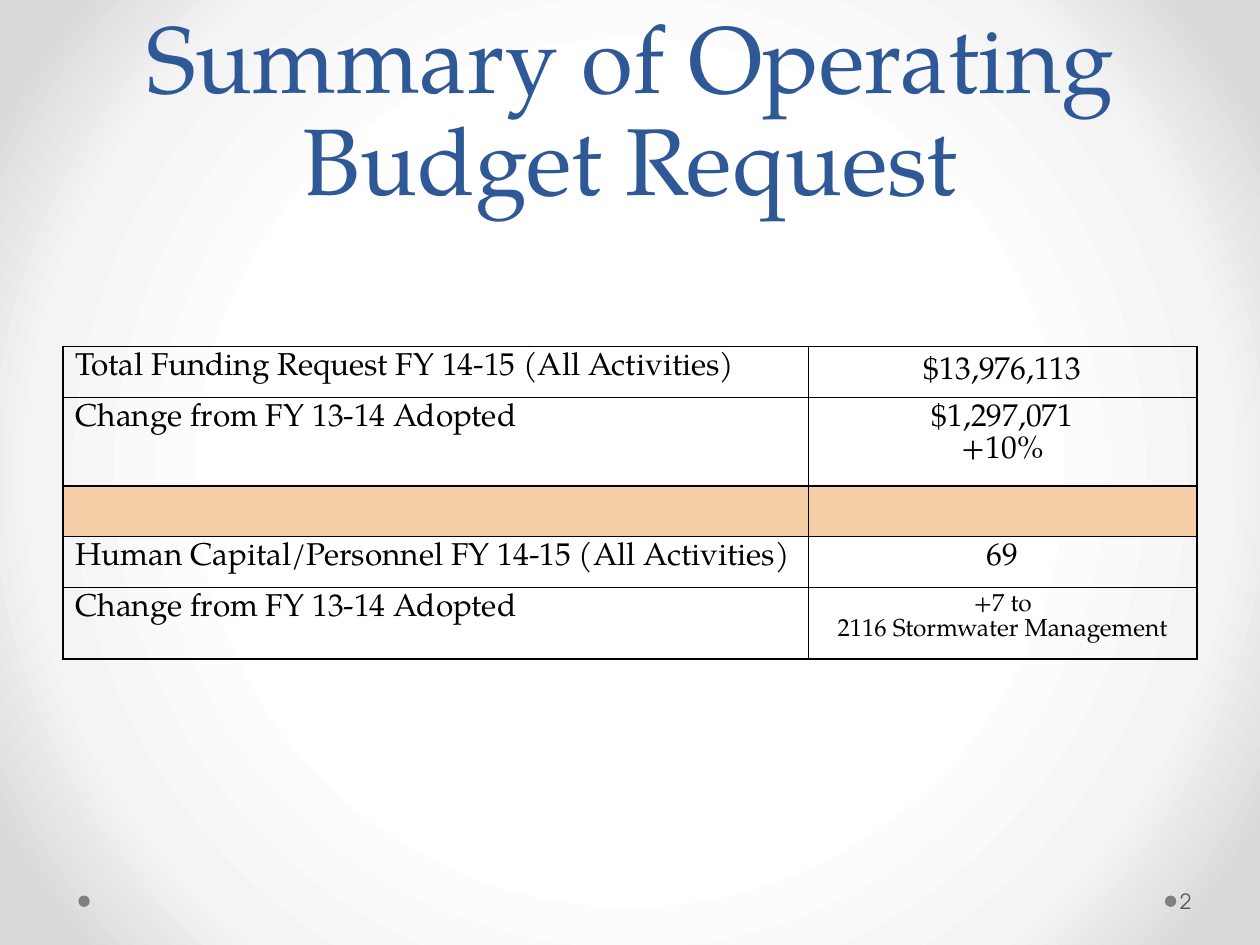
from dataclasses import dataclass

from lxml.etree import SubElement
from pptx import Presentation
from pptx.dml.color import RGBColor
from pptx.enum.shapes import MSO_SHAPE
from pptx.enum.text import MSO_ANCHOR, PP_ALIGN
from pptx.oxml import parse_xml
from pptx.oxml.ns import nsdecls, qn
from pptx.util import Pt


@dataclass(frozen=True)
class Theme:
    serif: str = "TeX Gyre Pagella"
    sans: str = "TeX Gyre Adventor"
    heading: str = "2F5897"
    ink: str = "000000"
    muted: str = "595959"
    dot: str = "808080"
    band: str = "F5CEA7"
    backdrop: tuple = ((50, "FFFFFF"), (76, "F4F4F4"), (92, "DADADA"))
    title_size: int = 54
    body_size: int = 18
    detail_size: int = 14
    number_size: int = 12


THEME = Theme()

# label, value lines, value size, value anchor, row height
BUDGET_ROWS = (
    ("Total Funding Request FY 14-15 (All Activities)", "$13,976,113",
     THEME.body_size, MSO_ANCHOR.MIDDLE, 29.3),
    ("Change from FY 13-14 Adopted", "$1,297,071\n+10%",
     THEME.body_size, MSO_ANCHOR.TOP, 43.4),
    ("", "", THEME.body_size, MSO_ANCHOR.TOP, 25.2),
    ("Human Capital/Personnel FY 14-15 (All Activities)", "69",
     THEME.body_size, MSO_ANCHOR.TOP, 29.3),
    ("Change from FY 13-14 Adopted", "+7 to\n2116 Stormwater Management",
     THEME.detail_size, MSO_ANCHOR.TOP, 35.6),
)


def write(frame, text, *, size=THEME.body_size, font=THEME.serif,
          color=THEME.ink, align=PP_ALIGN.LEFT, spacing=None):
    """Fill a text frame, one paragraph for each line of the text."""
    frame.word_wrap = True
    frame.text = text
    for paragraph in frame.paragraphs:
        paragraph.alignment = align
        if spacing:
            paragraph.line_spacing = Pt(spacing)
        for part in (paragraph, *paragraph.runs):
            part.font.size = Pt(size)
            part.font.name = font
            part.font.color.rgb = RGBColor.from_string(color)


def paint_backdrop(slide):
    fill = slide.background.fill
    fill.gradient()
    stops = "".join(
        f'<a:gs pos="{position * 1000}"><a:srgbClr val="{color}"/></a:gs>'
        for position, color in THEME.backdrop)
    radial = parse_xml(
        f'<a:gradFill {nsdecls("a")} rotWithShape="1"><a:gsLst>{stops}</a:gsLst>'
        '<a:path path="circle"><a:fillToRect l="50000" t="50000" r="50000" b="50000"/>'
        '</a:path></a:gradFill>')
    linear = slide.element.find(".//" + qn("a:gradFill"))
    linear.getparent().replace(linear, radial)


def add_title(slide, left, top, width, height):
    title = slide.shapes.add_textbox(Pt(left), Pt(top), Pt(width), Pt(height))
    title.text_frame.vertical_anchor = MSO_ANCHOR.BOTTOM
    write(title.text_frame, "Summary of Operating Budget Request",
          size=THEME.title_size, color=THEME.heading,
          align=PP_ALIGN.CENTER, spacing=58)


def outline_cell(cell):
    properties = cell._tc.get_or_add_tcPr()
    for index, side in enumerate(("lnL", "lnR", "lnT", "lnB")):
        border = parse_xml(
            f'<a:{side} {nsdecls("a")} w="{Pt(1)}"><a:solidFill/></a:{side}>')
        SubElement(border[0], qn("a:srgbClr"), val=THEME.ink)
        properties.insert(index, border)


def add_budget_table(slide, left, top, width, label_width):
    height = sum(row[-1] for row in BUDGET_ROWS)
    table = slide.shapes.add_table(
        len(BUDGET_ROWS), 2, Pt(left), Pt(top), Pt(width), Pt(height)).table
    table.first_row = table.horz_banding = False
    table.columns[0].width = Pt(label_width)
    table.columns[1].width = Pt(width - label_width)
    for row, (label, value, size, anchor, row_height) in enumerate(BUDGET_ROWS):
        table.rows[row].height = Pt(row_height)
        label_cell, value_cell = table.cell(row, 0), table.cell(row, 1)
        write(label_cell.text_frame, label)
        write(value_cell.text_frame, value, size=size, align=PP_ALIGN.CENTER)
        value_cell.vertical_anchor = anchor
        for cell in (label_cell, value_cell):
            if label:
                cell.fill.background()
            else:
                cell.fill.solid()
                cell.fill.fore_color.rgb = RGBColor.from_string(THEME.band)
            outline_cell(cell)


def add_footer(slide, left, top, width, height):
    """Place a dot at the left, and a second dot before the slide number."""
    diameter, number_width = 6.5, 44
    number_left = left + width - number_width
    for dot_left in (left, number_left - diameter):
        dot = slide.shapes.add_shape(
            MSO_SHAPE.OVAL, Pt(dot_left), Pt(top + (height - diameter) / 2),
            Pt(diameter), Pt(diameter))
        dot.shadow.inherit = False
        dot.fill.solid()
        dot.fill.fore_color.rgb = RGBColor.from_string(THEME.dot)
        dot.line.fill.background()
    number = slide.shapes.add_textbox(
        Pt(number_left), Pt(top), Pt(number_width), Pt(height))
    frame = number.text_frame
    frame.vertical_anchor = MSO_ANCHOR.MIDDLE
    frame.margin_left = Pt(2)
    frame.margin_right = Pt(3.6)
    write(frame, "2", size=THEME.number_size, font=THEME.sans, color=THEME.muted)


def main():
    deck = Presentation()
    deck.slide_width, deck.slide_height = Pt(720), Pt(540)
    slide = deck.slides.add_slide(deck.slide_layouts[6])
    paint_backdrop(slide)
    add_title(slide, left=36, top=0, width=648, height=126)
    add_budget_table(slide, left=36, top=198, width=648, label_width=426)
    add_footer(slide, left=44.8, top=500.6, width=671.4, height=28.8)
    deck.save("out.pptx")


if __name__ == "__main__":
    main()
